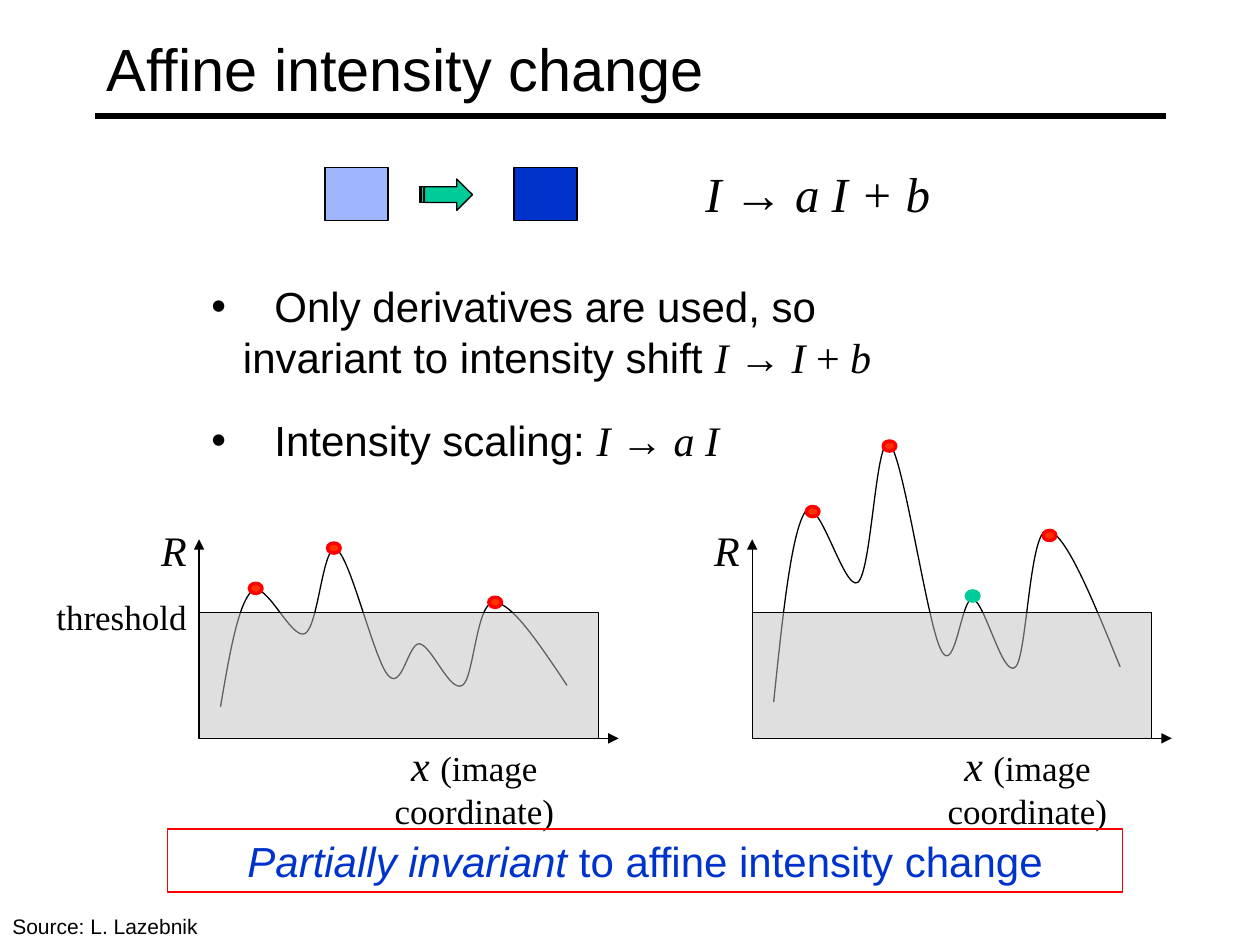
from dataclasses import dataclass
from typing import NamedTuple

from lxml import etree
from pptx import Presentation
from pptx.dml.color import RGBColor
from pptx.enum.shapes import MSO_CONNECTOR, MSO_SHAPE
from pptx.enum.text import MSO_ANCHOR, PP_ALIGN
from pptx.oxml.ns import qn
from pptx.util import Inches, Pt

STRAIGHT = MSO_CONNECTOR.STRAIGHT
RECTANGLE = MSO_SHAPE.RECTANGLE
OVAL = MSO_SHAPE.OVAL
STRIPED_ARROW = MSO_SHAPE.STRIPED_RIGHT_ARROW
MIDDLE = MSO_ANCHOR.MIDDLE
LEFT = PP_ALIGN.LEFT
CENTER = PP_ALIGN.CENTER

SANS = "Arial"
SERIF = "Times New Roman"
COLORS = {
    "ink": "000000",
    "blue": "0033CC",
    "pale_blue": "9FB6FF",
    "green": "00CC99",
    "red": "FF0000",
    "orange_red": "FF3300",
    "gray": "C0C0C0",
}

AXIS_Y = 5.86
AXIS_TOP = 4.28
AXIS_LENGTH = 3.33
THRESHOLD_Y = 4.86
CURVE_TOP = 4.31
RESPONSE = [
    (0.17, 5.61),
    (0.24, 5.2), (0.31, 4.79), (0.42, 4.69),
    (0.53, 4.6), (0.73, 5.08), (0.84, 5.03),
    (0.95, 4.97), (0.98, 4.31), (1.09, 4.36),
    (1.2, 4.42), (1.39, 5.24), (1.5, 5.36),
    (1.61, 5.49), (1.66, 5.1), (1.75, 5.11),
    (1.85, 5.13), (1.99, 5.5), (2.09, 5.44),
    (2.18, 5.39), (2.2, 4.78), (2.34, 4.78),
    (2.48, 4.78), (2.7, 5.11), (2.92, 5.44),
]


class Box(NamedTuple):
    left: float
    top: float
    width: float
    height: float


class Span(NamedTuple):
    text: str
    size: int
    font: str = SERIF
    italic: bool = False


class Peak(NamedTuple):
    left: float
    top: float
    fill: str = "orange_red"
    outline: str = "red"


@dataclass
class Graph:
    origin: float
    curve_top: float
    scale: float
    peaks: list[Peak]


GRAPHS = [
    Graph(1.58, CURVE_TOP, 1, [Peak(1.98, 4.63), Peak(2.6, 4.31), Peak(3.88, 4.74)]),
    Graph(5.97, 3.44, 1.64, [
        Peak(6.4, 4.02), Peak(7.01, 3.5),
        Peak(7.67, 4.69, "green", "green"), Peak(8.28, 4.21),
    ]),
]
BULLETS = [
    (Box(1.58, 2.18, 6.08, 0.91), [
        Span("\tOnly derivatives are used, so invariant to intensity shift ", 24, SANS),
        Span("I ", 24, italic=True), Span("→ ", 24), Span("I ", 24, italic=True),
        Span("+ ", 24), Span("b", 24, italic=True),
    ]),
    (Box(1.58, 3.24, 5.67, 0.5), [
        Span("\tIntensity scaling: ", 24, SANS),
        Span("I ", 24, italic=True), Span("→ ", 24), Span("a I", 24, italic=True),
    ]),
]


def color(name: str) -> RGBColor:
    return RGBColor.from_string(COLORS[name])


def write(shape, spans: list[Span], align=LEFT, ink: str = "ink") -> None:
    paragraph = shape.text_frame.paragraphs[0]
    paragraph.alignment = align
    for span in spans:
        run = paragraph.add_run()
        run.text = span.text
        run.font.size = Pt(span.size)
        run.font.name = span.font
        run.font.italic = span.italic
        run.font.color.rgb = color(ink)


def add_text(slide, box: Box, spans: list[Span], align=LEFT, wrap: bool = True, inset: float = 0.1):
    label = slide.shapes.add_textbox(*map(Inches, box))
    frame = label.text_frame
    frame.word_wrap = wrap
    frame.margin_left = frame.margin_right = Inches(inset)
    write(label, spans, align)
    return label


def add_bullet(slide, box: Box, spans: list[Span]) -> None:
    item = add_text(slide, box, spans)
    properties = item.text_frame.paragraphs[0]._p.get_or_add_pPr()
    properties.set("marL", str(Inches(0.25)))
    properties.set("indent", str(-Inches(0.25)))
    etree.SubElement(properties, qn("a:buFont"), typeface=SANS)
    etree.SubElement(properties, qn("a:buChar"), char="•")
    tabs = etree.SubElement(properties, qn("a:tabLst"))
    etree.SubElement(tabs, qn("a:tab"), pos=str(Inches(0.5)), algn="l")


def add_block(slide, kind, box: Box, fill: str | None, outline: str = "ink", weight: float = 0.75):
    block = slide.shapes.add_shape(kind, *map(Inches, box))
    block.shadow.inherit = False
    if fill:
        block.fill.solid()
        block.fill.fore_color.rgb = color(fill)
    else:
        block.fill.background()
    block.line.color.rgb = color(outline)
    block.line.width = Pt(weight)
    return block


def add_line(slide, start: tuple, end: tuple, weight: float, arrow: bool = False) -> None:
    line = slide.shapes.add_connector(STRAIGHT, *map(Inches, start + end))
    line.line.color.rgb = color("ink")
    line.line.width = Pt(weight)
    properties = line._element.spPr
    if arrow:
        etree.SubElement(properties.find(qn("a:ln")), qn("a:tailEnd"), type="triangle")
    etree.SubElement(properties, qn("a:effectLst"))


def add_curve(slide, graph: Graph) -> None:
    points = [
        (Inches(graph.origin + x), Inches(graph.curve_top + (y - CURVE_TOP) * graph.scale))
        for x, y in RESPONSE
    ]
    builder = slide.shapes.build_freeform(*points[0])
    builder.add_line_segments(points[1:], close=False)
    curve = builder.convert_to_shape()
    curve.shadow.inherit = False
    curve.fill.background()
    curve.line.color.rgb = color("ink")
    curve.line.width = Pt(0.75)
    outline = curve._element.xpath(".//a:path")[0]
    segments = outline.findall(qn("a:lnTo"))
    for first in range(0, len(segments), 3):
        bezier = etree.SubElement(outline, qn("a:cubicBezTo"))
        for segment in segments[first:first + 3]:
            bezier.append(segment[0])
            outline.remove(segment)


def add_graph(slide, graph: Graph) -> None:
    origin = (graph.origin, AXIS_Y)
    add_curve(slide, graph)
    add_line(slide, origin, (graph.origin + AXIS_LENGTH, AXIS_Y), 0.75, arrow=True)
    add_line(slide, origin, (graph.origin, AXIS_TOP), 0.75, arrow=True)
    add_text(slide, Box(graph.origin - 0.4, 4.11, 0.4, 0.5),
             [Span("R", 24, italic=True)], CENTER, wrap=False)
    add_text(slide, Box(graph.origin + 0.92, 5.82, 2.53, 0.5),
             [Span("x ", 24, italic=True), Span("(image coordinate)", 20)], CENTER, inset=0.4)
    below = add_block(slide, RECTANGLE, Box(graph.origin, THRESHOLD_Y, 3.17, AXIS_Y - THRESHOLD_Y), "gray")
    tint = below._element.spPr.find(qn("a:solidFill"))[0]
    etree.SubElement(tint, qn("a:alpha"), val="50000")
    for peak in graph.peaks:
        add_block(slide, OVAL, Box(peak.left, peak.top, 0.1, 0.08), peak.fill, peak.outline, 2)


def main() -> None:
    deck = Presentation()
    deck.slide_width, deck.slide_height = Inches(10), Inches(7.5)
    slide = deck.slides.add_slide(deck.slide_layouts[6])

    add_line(slide, (0.75, 0.92), (9.25, 0.92), 3)
    title = add_text(slide, Box(0.75, 0.08, 8.5, 0.92), [Span("Affine intensity change", 34, SANS)])
    title.text_frame.vertical_anchor = MIDDLE

    for box, spans in BULLETS:
        add_bullet(slide, box, spans)
    for graph in GRAPHS:
        add_graph(slide, graph)
    add_text(slide, Box(0.35, 4.68, 1.23, 0.43), [Span("threshold", 20)], CENTER, wrap=False, inset=0.02)

    conclusion = add_block(slide, RECTANGLE, Box(1.33, 6.58, 7.58, 0.5), None, "red")
    write(conclusion, [Span("Partially invariant ", 24, SANS, True),
                       Span("to affine intensity change", 24, SANS)], CENTER, "blue")

    add_text(slide, Box(5.5, 1.25, 2.02, 0.57),
             [Span("I ", 28, italic=True), Span("→ ", 28), Span("a I + b", 28, italic=True)], wrap=False)
    add_block(slide, RECTANGLE, Box(4.08, 1.33, 0.5, 0.42), "blue")
    add_block(slide, RECTANGLE, Box(2.58, 1.33, 0.5, 0.42), "pale_blue")
    add_block(slide, STRIPED_ARROW, Box(3.33, 1.42, 0.42, 0.25), "green")
    add_text(slide, Box(0, 7.2, 1.93, 0.3), [Span("Source: L. Lazebnik", 12, SANS)])

    deck.save("out.pptx")


if __name__ == "__main__":
    main()
